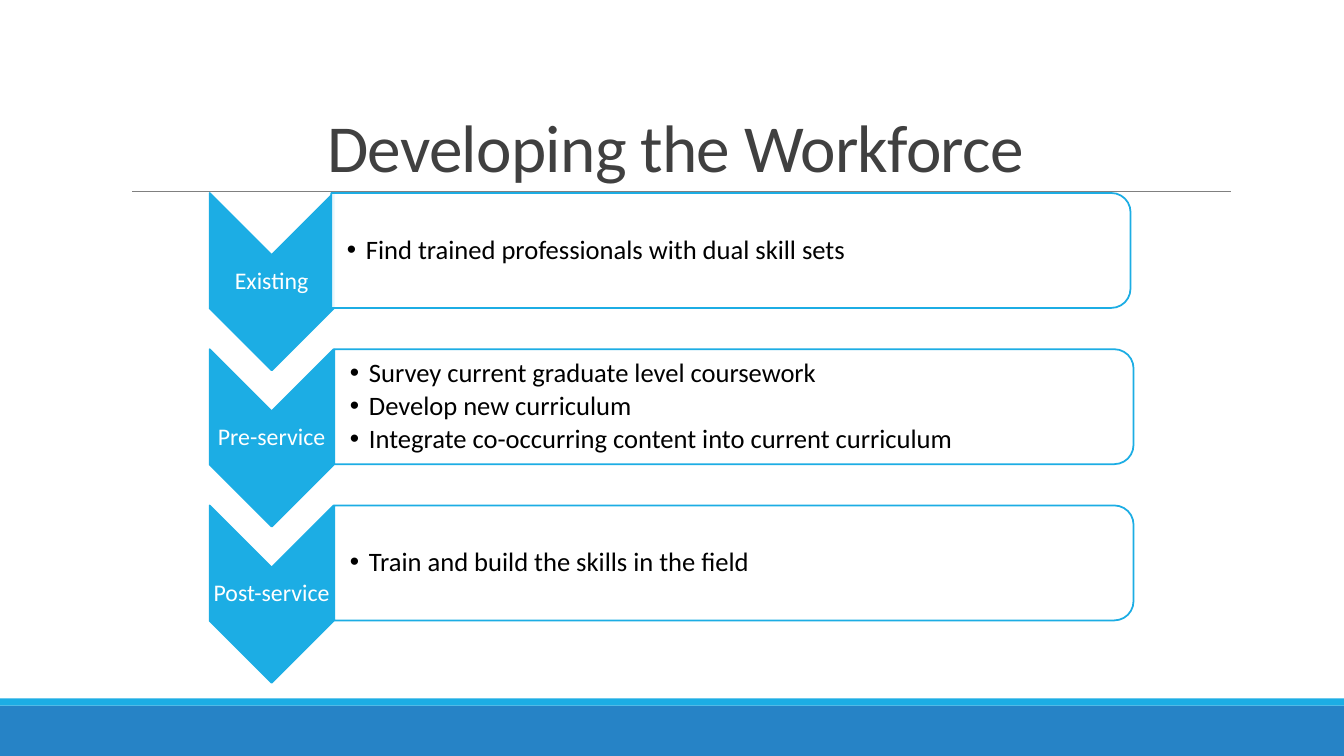
from dataclasses import dataclass

from lxml import etree
from pptx import Presentation
from pptx.dml.color import RGBColor
from pptx.enum.shapes import MSO_CONNECTOR, MSO_SHAPE
from pptx.enum.text import MSO_ANCHOR, MSO_AUTO_SIZE, PP_ALIGN
from pptx.oxml.ns import qn
from pptx.util import Inches, Pt

RECT = MSO_SHAPE.RECTANGLE
ARROW = MSO_SHAPE.CHEVRON
PANEL = MSO_SHAPE.ROUND_2_SAME_RECTANGLE
LINE = MSO_CONNECTOR.STRAIGHT
MIDDLE = MSO_ANCHOR.MIDDLE
BOTTOM = MSO_ANCHOR.BOTTOM
CENTER = PP_ALIGN.CENTER
LEFT = PP_ALIGN.LEFT
FIXED = MSO_AUTO_SIZE.NONE

COLORS = {
    "blue": "2683C6",
    "sky": "1CADE4",
    "gray": "808080",
    "title": "404040",
    "white": "FFFFFF",
    "black": "000000",
}
FONT = "Calibri"
COLS, ROWS = 133.33, 75
CELL = 0.1
FIRST, PITCH = 19.15, 15.5
INDENT = Inches(0.19)


@dataclass
class Box:
    left: float
    top: float
    width: float
    height: float


@dataclass
class Band:
    box: Box
    color: str


@dataclass
class Step:
    label: str
    points: list[str]
    left: float = 33.15


BANDS = [
    Band(Box(0, 70, COLS, 5), "blue"),
    Band(Box(0, 69.3, COLS, 0.7), "sky"),
]
STEPS = [
    Step("Existing", ["Find trained professionals with dual skill sets"], 32.85),
    Step("Pre-service", [
        "Survey current graduate level coursework",
        "Develop new curriculum",
        "Integrate co-occurring content into current curriculum",
    ]),
    Step("Post-service", ["Train and build the skills in the field"]),
]


def grid(cells: float) -> int:
    return Inches(cells * CELL)


def rgb(name: str) -> RGBColor:
    return RGBColor.from_string(COLORS[name])


def place(shape, box: Box) -> None:
    shape.left, shape.top = grid(box.left), grid(box.top)
    shape.width, shape.height = grid(box.width), grid(box.height)


def draw(slide, kind, box: Box, fill: str, line: str | None = None):
    shape = slide.shapes.add_shape(kind, 0, 0, 0, 0)
    place(shape, box)
    shape.shadow.inherit = False
    shape.fill.solid()
    shape.fill.fore_color.rgb = rgb(fill)
    if line:
        shape.line.color.rgb = rgb(line)
        shape.line.width = Pt(1.25)
    else:
        shape.line.fill.background()
    return shape


def turn(slide, kind, box: Box, fill: str):
    shift = (box.width - box.height) / 2
    flat = Box(box.left + shift, box.top - shift, box.height, box.width)
    shape = draw(slide, kind, flat, fill, "sky")
    shape.rotation = 90
    return shape


def write(shape, lines: list[str], size: float, color: str, align, anchor,
          space: float = 0.9, after: float = 0) -> None:
    frame = shape.text_frame
    frame.text = "\n".join(lines)
    frame.word_wrap = True
    frame.auto_size = FIXED
    frame.vertical_anchor = anchor
    for para in frame.paragraphs:
        para.alignment = align
        para.line_spacing = space
        para.space_before, para.space_after = Pt(0), Pt(after)
        para.font.name = FONT
        para.font.size = Pt(size)
        para.font.bold = False
        para.font.color.rgb = rgb(color)


def inset(shape, left: float) -> None:
    frame = shape.text_frame
    frame.margin_left = Inches(left)
    frame.margin_top = frame.margin_right = frame.margin_bottom = Inches(0.01)


def bullet(para) -> None:
    props = para._p.get_or_add_pPr()
    props.set("marL", str(INDENT))
    props.set("indent", str(-INDENT))
    font = etree.Element(qn("a:buFont"), typeface="Arial")
    mark = etree.Element(qn("a:buChar"), char="•")
    props.find(qn("a:spcAft")).addnext(font)
    font.addnext(mark)


def rule(slide) -> None:
    line = slide.shapes.add_connector(
        LINE, grid(13.1), grid(19), grid(122.1), grid(19))
    line.line.color.rgb = rgb("gray")
    line.line.width = Pt(0.5)
    etree.SubElement(line.element.spPr, qn("a:effectLst"))


def head(slide) -> None:
    title = slide.shapes.title
    place(title, Box(12, 3.1, 110, 15.9))
    write(title, ["Developing the Workforce"], 48, "title", CENTER, BOTTOM, 0.85)
    run = title.text_frame.paragraphs[0].runs[0]
    run.font._element.set("spc", "-50")


def stage(slide, step: Step, top: float, body) -> None:
    turn(slide, ARROW, Box(20.8, top, 12.3, 17.6), "sky")
    panel = turn(slide, PANEL, Box(step.left, top, 79.3, 11.4), "white")
    tint = panel.element.spPr.find(qn("a:solidFill"))[0]
    etree.SubElement(tint, qn("a:alpha"), val="90000")

    label = slide.shapes.add_textbox(0, 0, 0, 0)
    place(label, Box(20.8, top + 6.15, 12.3, 5.3))
    write(label, [step.label], 17, "white", CENTER, MIDDLE)
    inset(label, 0.01)

    place(body, Box(step.left + 0.05, top + 0.55, 78.8, 10.3))
    write(body, step.points, 19, "black", LEFT, MIDDLE, after=2.85)
    inset(body, 0.15)
    for para in body.text_frame.paragraphs:
        bullet(para)
    body.element.getparent().append(body.element)


def main() -> None:
    deck = Presentation()
    deck.slide_width, deck.slide_height = grid(COLS), grid(ROWS)
    slide = deck.slides.add_slide(deck.slide_layouts.get_by_name("Comparison"))
    bodies = list(slide.placeholders)[1:]
    for band in BANDS:
        draw(slide, RECT, band.box, band.color)
    rule(slide)
    head(slide)
    for row, (step, body) in enumerate(zip(STEPS, bodies)):
        stage(slide, step, FIRST + row * PITCH, body)
    for spare in bodies[len(STEPS):]:
        spare.element.getparent().remove(spare.element)
    deck.save("out.pptx")


if __name__ == "__main__":
    main()
